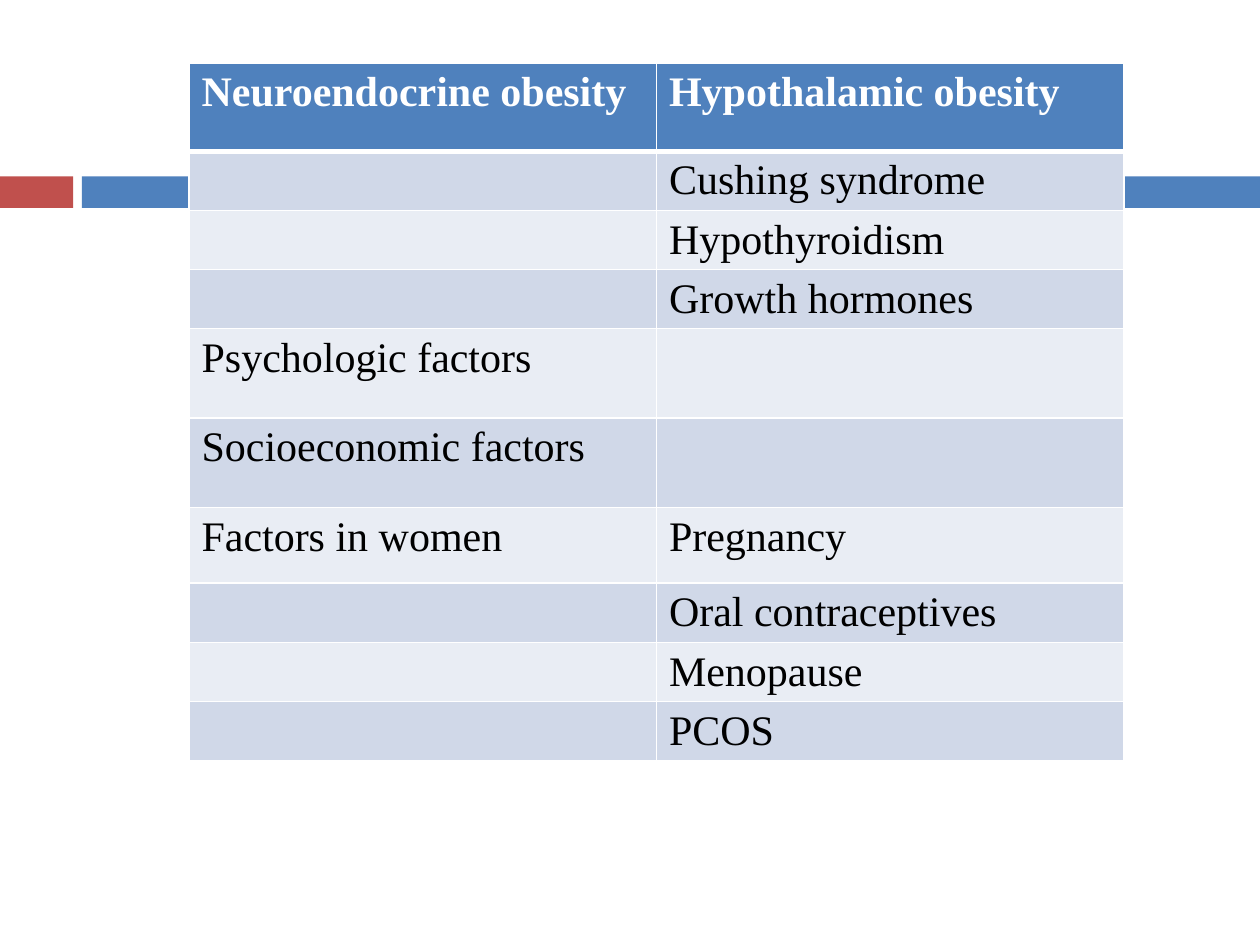
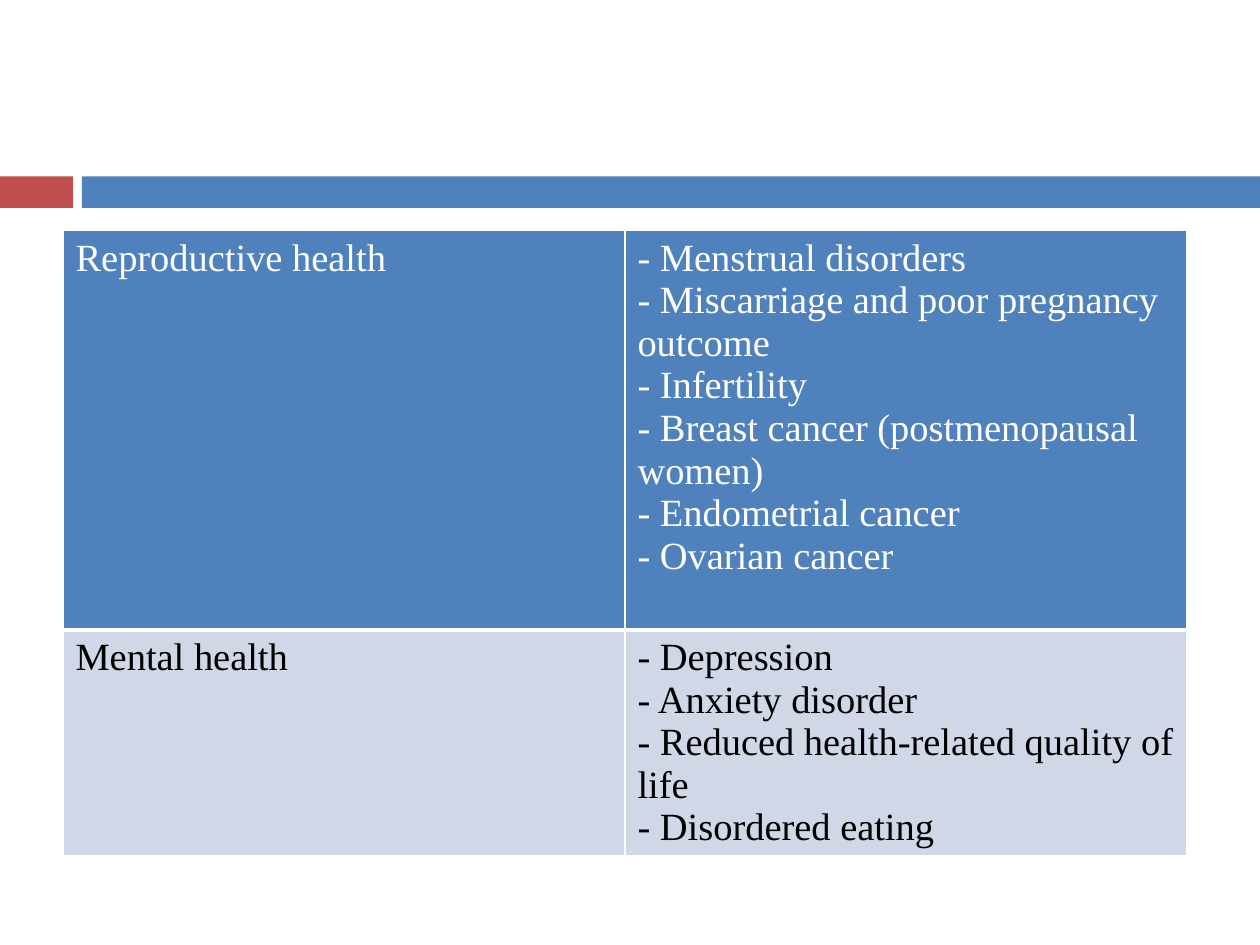
from lxml.etree import SubElement
from pptx import Presentation
from pptx.dml.color import RGBColor
from pptx.enum.shapes import MSO_SHAPE
from pptx.oxml.ns import qn
from pptx.util import Inches, Pt

FONT = "Times New Roman"
BLUE = "4F81BD"
RED = "C0504D"
WHITE = "FFFFFF"
BLACK = "000000"
BODY_BANDS = ("D0D8E8", "E9EDF4")

OBESITY_ROWS = [
    ("Neuroendocrine obesity", "Hypothalamic obesity"),
    ("", "Cushing syndrome"),
    ("", "Hypothyroidism"),
    ("", "Growth hormones"),
    ("Psychologic factors", ""),
    ("Socioeconomic factors", ""),
    ("Factors in women", "Pregnancy"),
    ("", "Oral contraceptives"),
    ("", "Menopause"),
    ("", "PCOS"),
]
OBESITY_HEIGHTS = [0.7, 0.47, 0.47, 0.47, 0.71, 0.71, 0.6, 0.47, 0.47, 0.47]

HEALTH_ROWS = [
    ("Reproductive health", "\n".join([
        "- Menstrual disorders",
        "- Miscarriage and poor pregnancy outcome",
        "- Infertility",
        "- Breast cancer (postmenopausal women)",
        "- Endometrial cancer",
        "- Ovarian cancer",
    ])),
    ("Mental health", "\n".join([
        "- Depression",
        "- Anxiety disorder",
        "- Reduced health-related quality of life",
        "- Disordered eating",
    ])),
]
HEALTH_HEIGHTS = [3.17, 1.78]


def paint(fill, color):
    fill.solid()
    fill.fore_color.rgb = RGBColor.from_string(color)


def add_bar(slide, left, top, width, height, color):
    bar = slide.shapes.add_shape(
        MSO_SHAPE.RECTANGLE, Inches(left), Inches(top), Inches(width), Inches(height))
    bar.shadow.inherit = False
    paint(bar.fill, color)
    bar.line.fill.background()


def add_band(slide, left=0, top=1.4, width=10, height=0.25):
    accent_width, gap = 0.58, 0.07
    main_left = accent_width + gap
    add_bar(slide, left, top, accent_width, height, RED)
    add_bar(slide, left + main_left, top, width - main_left, height, BLUE)


def set_borders(cell, top, bottom):
    properties = cell._tc.get_or_add_tcPr()
    for side, points in (("L", 1), ("R", 1), ("T", top), ("B", bottom)):
        line = SubElement(properties, qn(f"a:ln{side}"), w=str(Pt(points)))
        solid_fill = SubElement(line, qn("a:solidFill"))
        SubElement(solid_fill, qn("a:srgbClr"), val=WHITE)


def format_cell(cell, text, row_index, size, bold_header):
    is_header = row_index == 0
    set_borders(cell, top=3 if row_index == 1 else 1, bottom=3 if is_header else 1)
    paint(cell.fill, BLUE if is_header else BODY_BANDS[(row_index - 1) % 2])
    if not text:
        return
    cell.text_frame.text = text
    for paragraph in cell.text_frame.paragraphs:
        for run in paragraph.runs:
            run.font.name = FONT
            run.font.size = Pt(size)
            run.font.bold = is_header and bold_header
            run.font.color.rgb = RGBColor.from_string(WHITE if is_header else BLACK)


def add_two_column_table(slide, left, top, width, rows, heights, size, bold_header):
    table = slide.shapes.add_table(
        len(rows), 2, Inches(left), Inches(top), Inches(width), Inches(sum(heights))).table
    for column in table.columns:
        column.width = Inches(width / 2)
    for row_index, (texts, height) in enumerate(zip(rows, heights)):
        table.rows[row_index].height = Inches(height)
        for column_index, text in enumerate(texts):
            format_cell(table.cell(row_index, column_index), text,
                        row_index, size, bold_header)


def add_table_slide(presentation, **table_options):
    slide = presentation.slides.add_slide(presentation.slide_layouts[6])
    add_band(slide)
    add_two_column_table(slide, **table_options)


def main():
    presentation = Presentation()
    presentation.slide_width = Inches(10)
    presentation.slide_height = Inches(7.5)
    add_table_slide(presentation, left=1.5, top=0.5, width=7.42, rows=OBESITY_ROWS,
                    heights=OBESITY_HEIGHTS, size=24, bold_header=True)
    add_table_slide(presentation, left=0.5, top=1.83, width=8.92, rows=HEALTH_ROWS,
                    heights=HEALTH_HEIGHTS, size=22, bold_header=False)
    presentation.save("out.pptx")


if __name__ == "__main__":
    main()
